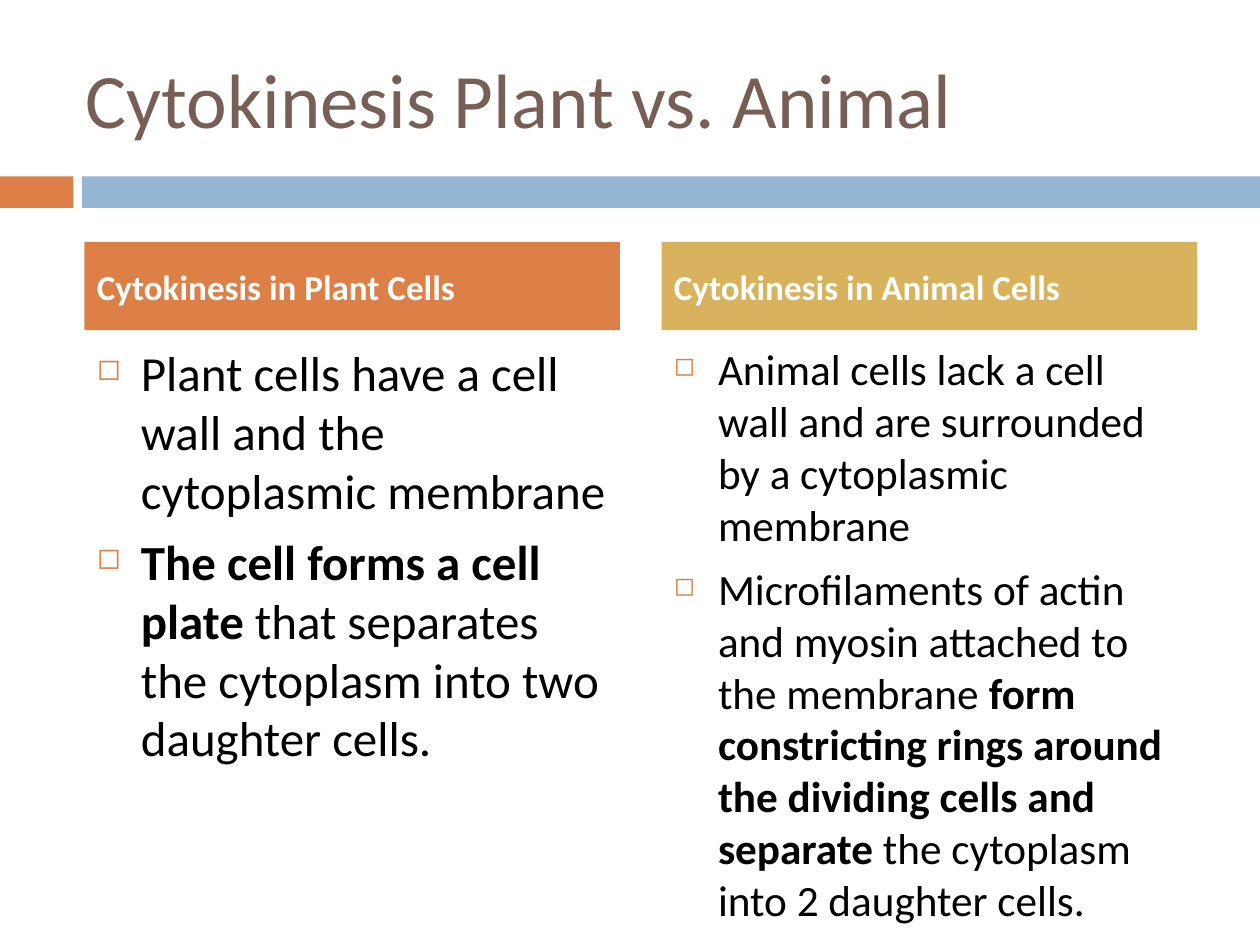
from dataclasses import dataclass

from lxml.etree import SubElement
from pptx import Presentation
from pptx.dml.color import RGBColor
from pptx.enum.shapes import MSO_SHAPE
from pptx.enum.text import MSO_ANCHOR, MSO_AUTO_SIZE, PP_ALIGN
from pptx.oxml.ns import qn
from pptx.util import Inches, Pt


@dataclass(frozen=True)
class Theme:
    font: str = "Calibri"
    brown: str = "775F55"
    orange: str = "DD8047"
    blue: str = "94B6D2"
    gold: str = "D8B25C"
    black: str = "000000"
    white: str = "FFFFFF"
    title: float = 44
    head: float = 20
    plant: float = 28
    animal: float = 24.7
    gap: float = 7


THEME = Theme()
WIDTH, HEIGHT = 10, 7.5
LEFT, COL, STEP = 0.67, 4.25, 4.58

# Each column: heading, fill, text size, points made of (text, bold) runs
COLUMNS = [
    ("Cytokinesis in Plant Cells", THEME.orange, THEME.plant, [
        [("Plant cells have a cell wall and the cytoplasmic membrane", False)],
        [("The cell forms a cell plate ", True),
         ("that separates the cytoplasm into two daughter cells.", False)],
    ]),
    ("Cytokinesis in Animal Cells", THEME.gold, THEME.animal, [
        [("Animal cells lack a cell wall and are surrounded by a "
          "cytoplasmic membrane", False)],
        [("Microfilaments of actin and myosin attached to the membrane ", False),
         ("form constricting rings around the dividing cells and separate ", True),
         ("the cytoplasm into 2 daughter cells.", False)],
    ]),
]


def style(run, size, color, bold=False):
    font = run.font
    font.name = THEME.font
    font.size = Pt(size)
    font.bold = bold
    font.color.rgb = RGBColor.from_string(color)


def add_title(slide, text):
    title = slide.shapes.title
    title.left, title.top = Inches(0.58), Inches(0.3)
    title.width, title.height = Inches(8.92), Inches(0.95)
    frame = title.text_frame
    frame.text = text
    frame.auto_size = MSO_AUTO_SIZE.NONE
    frame.vertical_anchor = MSO_ANCHOR.MIDDLE
    para = frame.paragraphs[0]
    para.alignment = PP_ALIGN.LEFT
    style(para.runs[0], THEME.title, THEME.brown)


def add_block(slide, left, top, width, height, color):
    block = slide.shapes.add_shape(
        MSO_SHAPE.RECTANGLE, Inches(left), Inches(top),
        Inches(width), Inches(height))
    block.shadow.inherit = False
    block.fill.solid()
    block.fill.fore_color.rgb = RGBColor.from_string(color)
    block.line.fill.background()
    return block


def add_head(slide, left, text, color):
    frame = add_block(slide, left, 1.92, COL, 0.7, color).text_frame
    frame.text = text
    frame.vertical_anchor = MSO_ANCHOR.MIDDLE
    para = frame.paragraphs[0]
    para.alignment = PP_ALIGN.LEFT
    para.space_before = Pt(THEME.gap)
    style(para.runs[0], THEME.head, THEME.white, True)


def set_bullet(para):
    props = para._p.get_or_add_pPr()
    props.set("marL", str(Inches(0.35)))
    props.set("indent", str(-Inches(0.35)))
    color = SubElement(props, qn("a:buClr"))
    SubElement(color, qn("a:srgbClr"), val=THEME.orange)
    SubElement(props, qn("a:buSzPct"), val="60000")
    SubElement(props, qn("a:buChar"), char="◻")


def add_list(slide, left, points, size):
    box = slide.shapes.add_textbox(
        Inches(left), Inches(2.67), Inches(COL), Inches(3.92))
    frame = box.text_frame
    frame.word_wrap = True
    for i, point in enumerate(points):
        para = frame.add_paragraph() if i else frame.paragraphs[0]
        para.space_before = Pt(THEME.gap)
        set_bullet(para)
        for text, bold in point:
            run = para.add_run()
            run.text = text
            style(run, size, THEME.black, bold)


def main():
    deck = Presentation()
    deck.slide_width, deck.slide_height = Inches(WIDTH), Inches(HEIGHT)
    slide = deck.slides.add_slide(deck.slide_layouts[5])

    # Band under the title
    add_block(slide, 0, 1.4, 0.58, 0.25, THEME.orange)
    add_block(slide, 0.65, 1.4, WIDTH - 0.65, 0.25, THEME.blue)
    add_title(slide, "Cytokinesis Plant vs. Animal")

    # Two columns to compare
    for i, (head, color, size, points) in enumerate(COLUMNS):
        left = LEFT + i * STEP
        add_list(slide, left, points, size)
        add_head(slide, left, head, color)

    deck.save("out.pptx")


if __name__ == "__main__":
    main()
